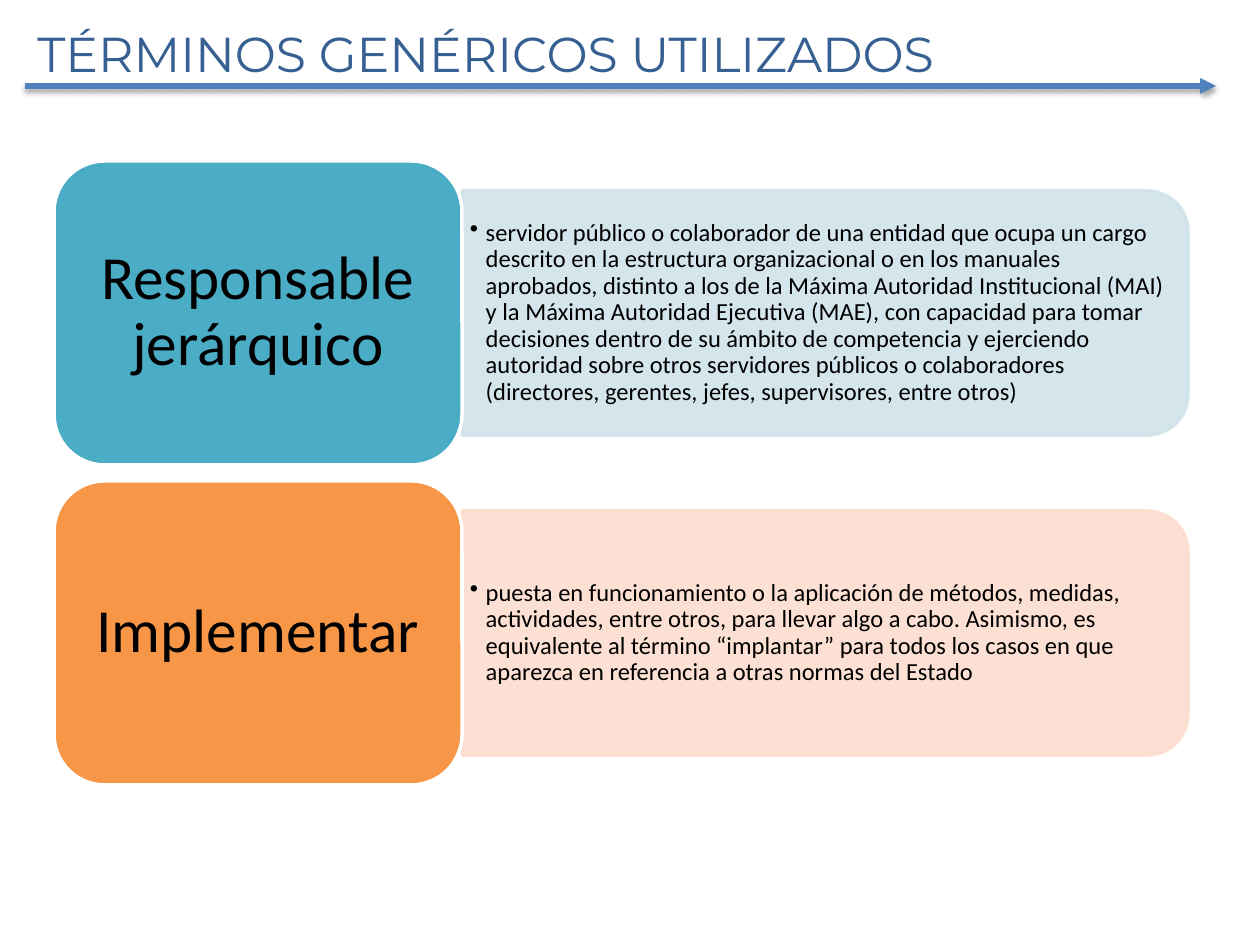
from lxml import etree
from pptx import Presentation
from pptx.dml.color import RGBColor
from pptx.enum.shapes import MSO_CONNECTOR, MSO_SHAPE
from pptx.enum.text import MSO_ANCHOR, PP_ALIGN
from pptx.oxml import parse_xml
from pptx.oxml.ns import nsdecls, qn
from pptx.util import Pt

STRAIGHT = MSO_CONNECTOR.STRAIGHT
ROUNDED, ROUNDED_TOP = MSO_SHAPE.ROUNDED_RECTANGLE, MSO_SHAPE.ROUND_2_SAME_RECTANGLE
MIDDLE, CENTER = MSO_ANCHOR.MIDDLE, PP_ALIGN.CENTER

PX_PER_INCH = 126
TITLE_BLUE = RGBColor(0x37, 0x60, 0x92)
RULE_BLUE = RGBColor(0x4F, 0x81, 0xBD)
TEAL, PALE_TEAL = RGBColor(0x4B, 0xAC, 0xC6), RGBColor(0xD0, 0xE3, 0xEA)
ORANGE, PALE_ORANGE = RGBColor(0xF7, 0x96, 0x46), RGBColor(0xFC, 0xDD, 0xCF)
WHITE, BLACK = RGBColor(0xFF, 0xFF, 0xFF), RGBColor(0, 0, 0)

TERMS = [
    ("Responsable jerárquico",
     "servidor público o colaborador de una entidad que ocupa un cargo descrito en la "
     "estructura organizacional o en los manuales aprobados, distinto a los de la Máxima "
     "Autoridad Institucional (MAI) y la Máxima Autoridad Ejecutiva (MAE), con capacidad "
     "para tomar decisiones dentro de su ámbito de competencia y ejerciendo autoridad "
     "sobre otros servidores públicos o colaboradores (directores, gerentes, jefes, "
     "supervisores, entre otros)",
     TEAL, PALE_TEAL),
    ("Implementar",
     "puesta en funcionamiento o la aplicación de métodos, medidas, actividades, entre "
     "otros, para llevar algo a cabo. Asimismo, es equivalente al término “implantar” para "
     "todos los casos en que aparezca en referencia a otras normas del Estado",
     ORANGE, PALE_ORANGE),
]


def px(*lengths):
    return [round(length * 914400 / PX_PER_INCH) for length in lengths]


def set_margins(frame, side, end):
    frame.word_wrap = True
    frame.margin_left = frame.margin_right = px(side)[0]
    frame.margin_top = frame.margin_bottom = px(end)[0]


def write(paragraph, text, size, color, font="Calibri"):
    run = paragraph.add_run()
    run.text = text
    run.font.size, run.font.name = Pt(size), font
    run.font.color.rgb = color


def add_block(slide, shape_type, box, fill, outline):
    block = slide.shapes.add_shape(shape_type, *px(*box))
    block.shadow.inherit = False
    block.fill.solid()
    block.fill.fore_color.rgb = fill
    block.line.color.rgb = outline
    block.line.width = Pt(2)
    return block


def add_header(slide, left, top, width, height):
    # Arrow under the title, with a soft shadow
    rule_y = top + 69
    rule = slide.shapes.add_connector(STRAIGHT, *px(left, rule_y, left + width, rule_y))
    rule.line.color.rgb = RULE_BLUE
    rule.line.width = Pt(3)
    etree.SubElement(rule.line._get_or_add_ln(), qn("a:tailEnd"), type="triangle")
    rule._element.spPr.append(parse_xml(
        f'<a:effectLst {nsdecls("a")}><a:outerShdw blurRad="{Pt(3.1)}" dist="{Pt(1.8)}" '
        'dir="5400000" rotWithShape="0"><a:srgbClr val="000000"><a:alpha val="35000"/>'
        '</a:srgbClr></a:outerShdw></a:effectLst>'))

    # Title
    title = slide.shapes.add_textbox(*px(left, top, 1120, height)).text_frame
    title.word_wrap = True
    write(title.paragraphs[0], "TÉRMINOS GENÉRICOS UTILIZADOS", 28, TITLE_BLUE, "Montserrat")


def add_term(slide, left, top, width, height, term, definition, strong, pale):
    label_width = 408
    panel_left, panel_width, panel_height = left + label_width, width - label_width, 244
    middle_x, middle_y = panel_left + panel_width / 2, top + height / 2

    # Definition panel: an upright shape turned so its rounded end faces right
    panel = add_block(slide, ROUNDED_TOP,
                      (middle_x - panel_height / 2, middle_y - panel_width / 2,
                       panel_height, panel_width), pale, pale)
    panel.rotation = 90
    for color in panel._element.spPr.iter(qn("a:srgbClr")):
        etree.SubElement(color, qn("a:alpha"), val="90000")

    # Definition text
    text_height = 220
    frame = slide.shapes.add_textbox(
        *px(panel_left, middle_y - text_height / 2, panel_width - 12, text_height)).text_frame
    set_margins(frame, 8, 4)
    frame.vertical_anchor = MIDDLE
    paragraph = frame.paragraphs[0]
    indent = Pt(9)
    properties = paragraph._p.get_or_add_pPr()
    properties.set("marL", str(indent))
    properties.set("indent", str(-indent))
    etree.SubElement(properties, qn("a:buChar"), char="•")
    paragraph.line_spacing = 0.9
    write(paragraph, definition, 14, BLACK)

    # Term label
    label = add_block(slide, ROUNDED, (left, top, label_width, height), strong, WHITE)
    frame = label.text_frame
    set_margins(frame, 19, 9)
    frame.vertical_anchor = MIDDLE
    paragraph = frame.paragraphs[0]
    paragraph.alignment = CENTER
    paragraph.line_spacing = 0.9
    write(paragraph, term, 35, BLACK)


def main():
    deck = Presentation()
    deck.slide_width, deck.slide_height = px(1260, 945)
    slide = deck.slides.add_slide(deck.slide_layouts[6])
    add_header(slide, 25, 17, 1191, 72)
    row_height, gap = 304, 16
    for row, term in enumerate(TERMS):
        add_term(slide, 54, 161 + row * (row_height + gap), 1134, row_height, *term)
    deck.save("out.pptx")


if __name__ == "__main__":
    main()
